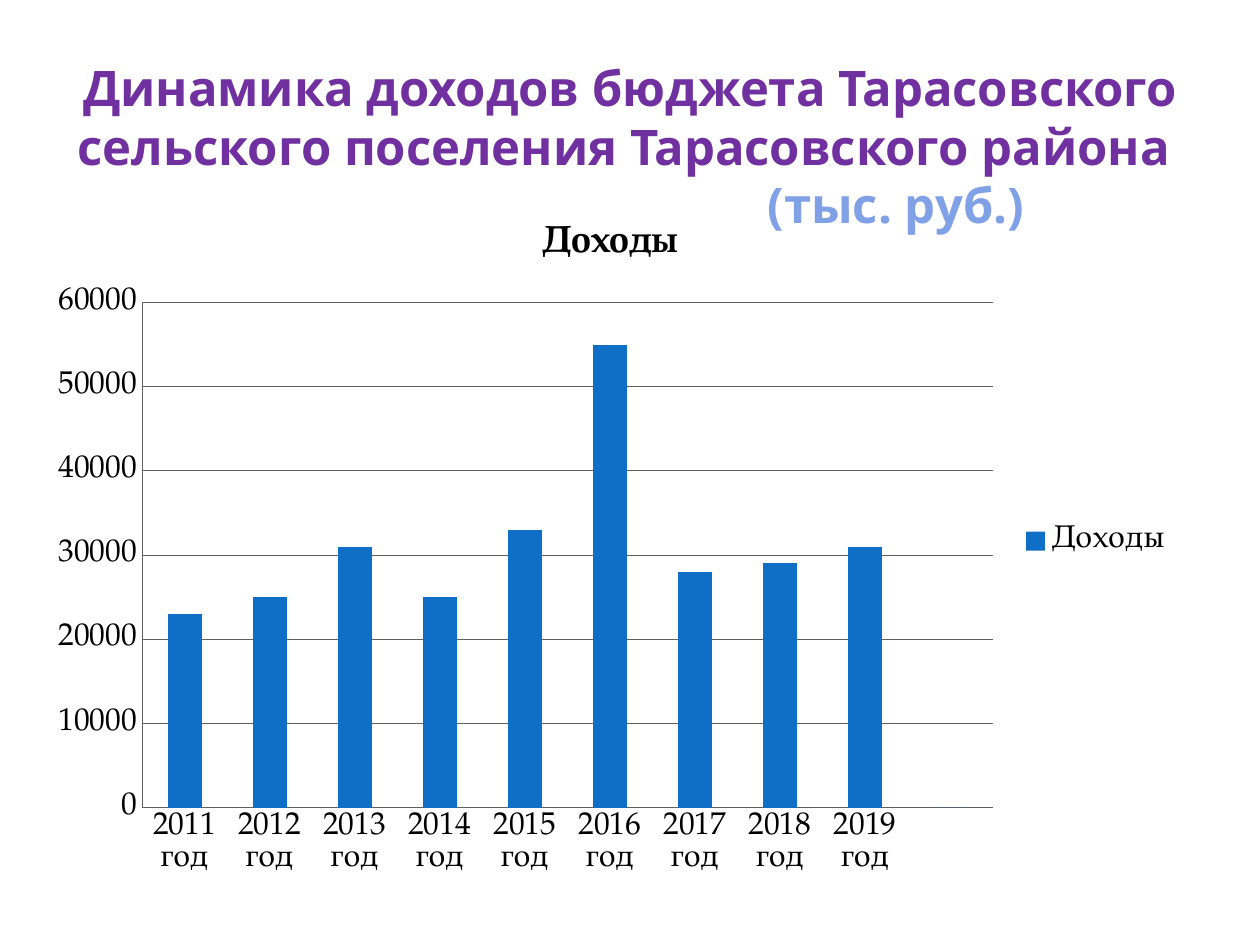
"""Build a slide with a column chart of yearly budget income."""
from dataclasses import dataclass

from pptx import Presentation
from pptx.chart.data import CategoryChartData
from pptx.dml.color import RGBColor
from pptx.enum.chart import XL_CHART_TYPE, XL_LEGEND_POSITION, XL_TICK_MARK
from pptx.enum.text import MSO_ANCHOR, MSO_AUTO_SIZE, PP_ALIGN
from pptx.util import Inches, Pt

COLORS = {
    "title": "7030A0",
    "unit": "81A1E7",
    "bar": "0F6FC6",
    "text": "000000",
    "grid": "606060",
}
TITLE_FONT = "Noto Sans"
CHART_FONT = "TeX Gyre Pagella"


@dataclass
class Area:
    left: float
    top: float
    width: float
    height: float

    def lengths(self):
        return [Inches(n) for n in (self.left, self.top, self.width, self.height)]


@dataclass
class Income:
    year: int
    amount: int


@dataclass
class TitleLine:
    text: str
    color: str
    indent: float = 0


TITLE_AREA = Area(0.5, 0.29, 9, 1.73)
CHART_AREA = Area(0.28, 1.53, 9.13, 5.53)
TITLE_LINES = [
    TitleLine("Динамика доходов бюджета Тарасовского сельского поселения "
              "Тарасовского района ", "title"),
    TitleLine("(тыс. руб.)", "unit", 4.22),
]
INCOMES = [
    Income(2011, 23000),
    Income(2012, 25000),
    Income(2013, 31000),
    Income(2014, 25000),
    Income(2015, 33000),
    Income(2016, 55000),
    Income(2017, 28000),
    Income(2018, 29000),
    Income(2019, 31000),
]


def format_font(font, *, name, size, color, bold=False):
    """Apply a complete text format to a font."""
    font.name = name
    font.size = Pt(size)
    font.bold = bold
    font.color.rgb = RGBColor.from_string(COLORS[color])


def write_line(para, text, *, indent=0, **text_format):
    """Write one centred line with an optional left indent in inches."""
    para.alignment = PP_ALIGN.CENTER
    para.line_spacing = 1.0
    para.space_before = Pt(0)
    if indent:
        para._p.get_or_add_pPr().set("marL", str(Inches(indent)))
    span = para.add_run()
    span.text = text
    format_font(span.font, **text_format)


def fill_title(box, area: Area, lines: list[TitleLine]) -> None:
    """Place the title placeholder and write its lines."""
    box.left, box.top, box.width, box.height = area.lengths()
    frame = box.text_frame
    frame.word_wrap = True
    frame.auto_size = MSO_AUTO_SIZE.NONE
    frame.vertical_anchor = MSO_ANCHOR.MIDDLE
    for index, line in enumerate(lines):
        para = frame.add_paragraph() if index else frame.paragraphs[0]
        write_line(para, line.text, indent=line.indent, name=TITLE_FONT,
                   size=28, color=line.color, bold=True)


def format_line(line, color: str) -> None:
    """Give a chart line its colour and thickness."""
    line.color.rgb = RGBColor.from_string(COLORS[color])
    line.width = Pt(0.5)


def add_income_chart(page, area: Area, incomes: list[Income]) -> None:
    """Draw the income columns, followed by an unnamed zero column."""
    data = CategoryChartData()
    data.categories = [f"{income.year} год" for income in incomes] + [""]
    data.add_series("Доходы", [income.amount for income in incomes] + [0])
    chart = page.shapes.add_chart(
        XL_CHART_TYPE.COLUMN_CLUSTERED, *area.lengths(), data).chart
    format_font(chart.font, name=CHART_FONT, size=18, color="text")

    chart.has_title = True
    heading = chart.chart_title.text_frame
    heading.text = "Доходы"
    format_font(heading.paragraphs[0].runs[0].font, name=CHART_FONT,
                size=21.6, color="text", bold=True)

    chart.has_legend = True
    chart.legend.position = XL_LEGEND_POSITION.RIGHT
    chart.legend.include_in_layout = False

    for axis in (chart.category_axis, chart.value_axis):
        axis.major_tick_mark = XL_TICK_MARK.NONE
        axis.minor_tick_mark = XL_TICK_MARK.NONE
        format_line(axis.format.line, "grid")
    chart.value_axis.minimum_scale = 0
    chart.value_axis.maximum_scale = 60000
    chart.value_axis.major_unit = 10000
    chart.value_axis.has_major_gridlines = True
    format_line(chart.value_axis.major_gridlines.format.line, "grid")

    plot = chart.plots[0]
    plot.vary_by_categories = False
    plot.gap_width = 150
    fill = plot.series[0].format.fill
    fill.solid()
    fill.fore_color.rgb = RGBColor.from_string(COLORS["bar"])


def main():
    """Assemble and save the deck."""
    deck = Presentation()
    deck.slide_width = Inches(10)
    deck.slide_height = Inches(7.5)
    page = deck.slides.add_slide(deck.slide_layouts[5])
    fill_title(page.shapes.title, TITLE_AREA, TITLE_LINES)
    add_income_chart(page, CHART_AREA, INCOMES)
    deck.save("out.pptx")


if __name__ == "__main__":
    main()
